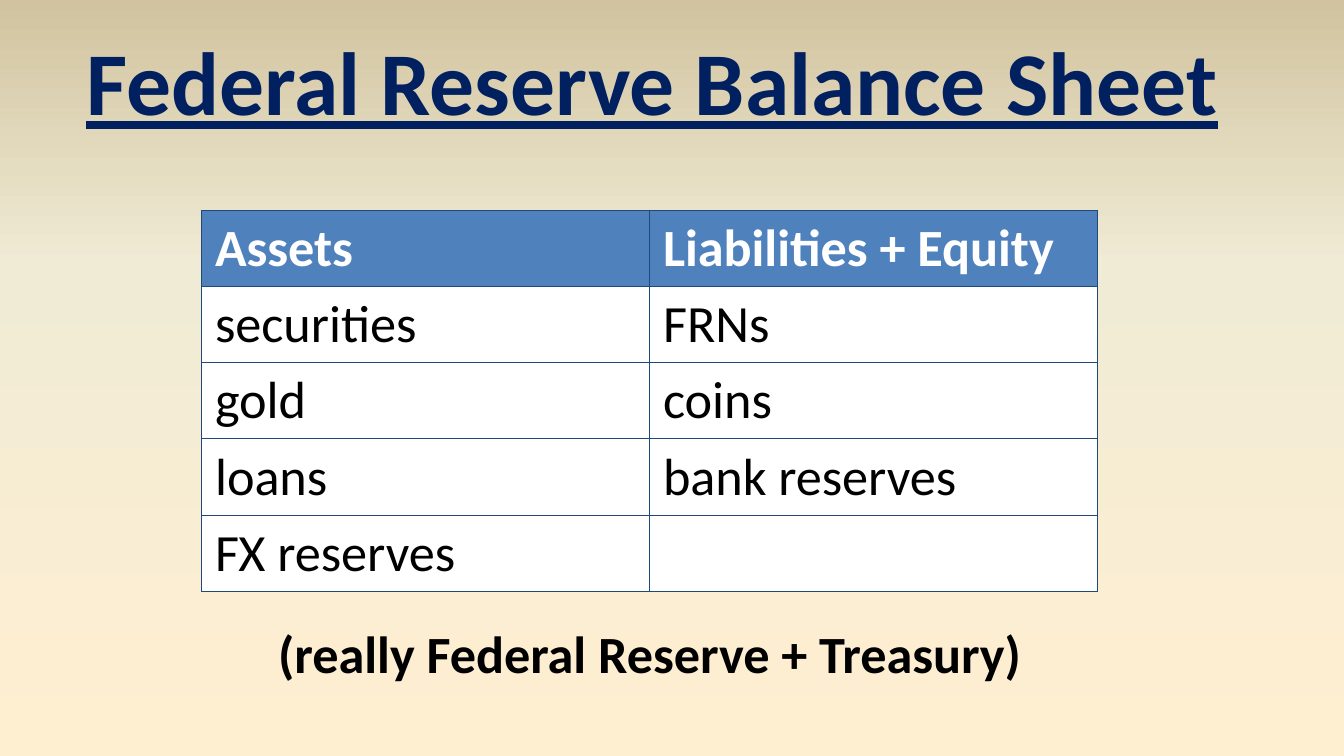
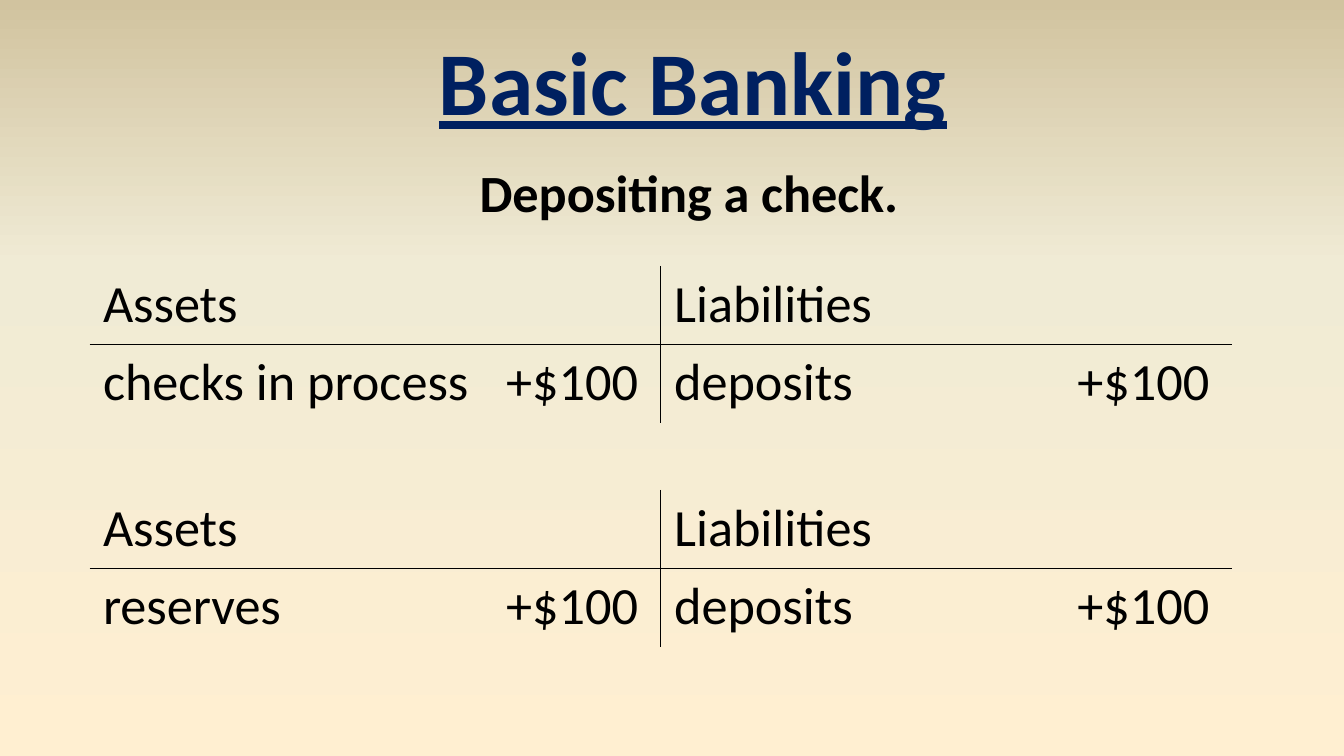
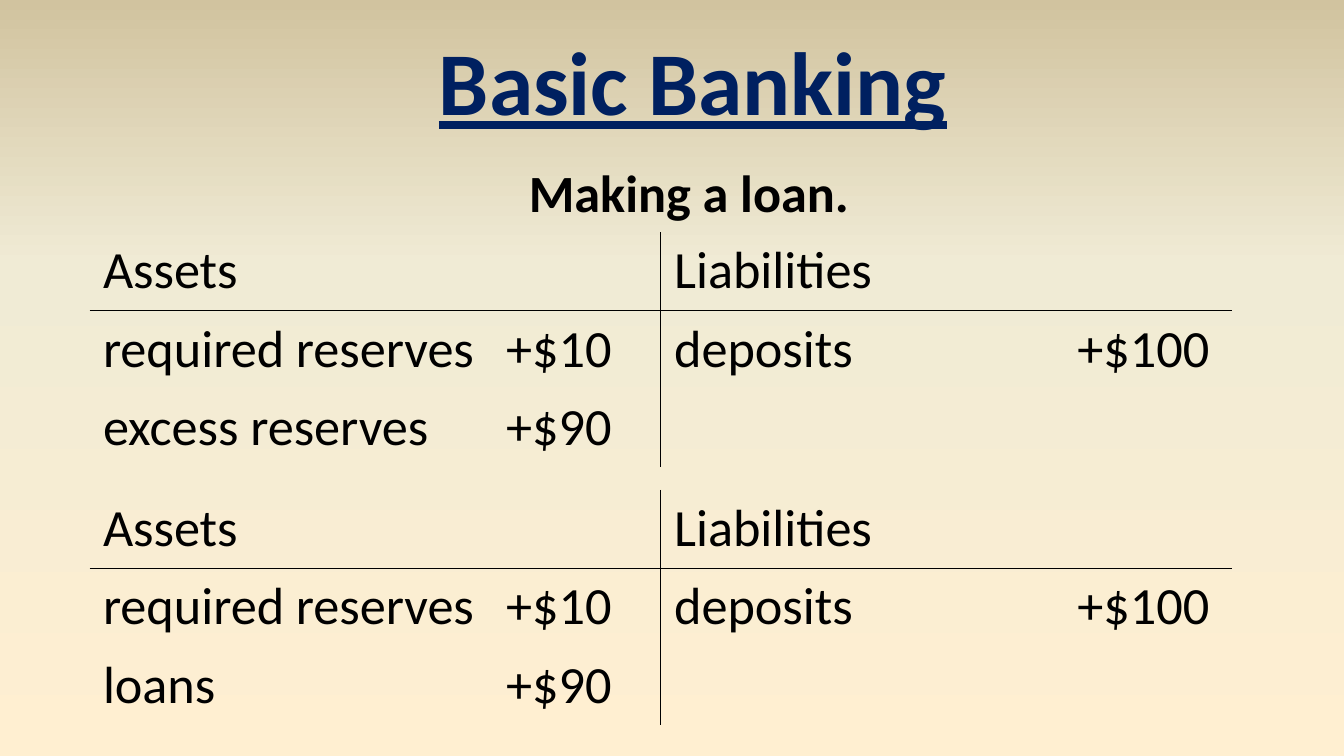
from copy import deepcopy

from lxml import etree
from pptx import Presentation
from pptx.dml.color import RGBColor
from pptx.enum.text import MSO_ANCHOR, MSO_AUTO_SIZE, PP_ALIGN
from pptx.oxml.ns import qn
from pptx.util import Pt

PX = 9525
CENTER, LEFT = PP_ALIGN.CENTER, PP_ALIGN.LEFT
TOP = MSO_ANCHOR.TOP
GROW = MSO_AUTO_SIZE.SHAPE_TO_FIT_TEXT
TITLE_ONLY = 5

NAVY, BLACK, WHITE = "002060", "000000", "FFFFFF"
HEADER_BLUE, GRID_BLUE = "4F81BD", "1F497D"
BACKDROP = [(0, "FFEFD1"), (0.65, "F0EBD5"), (1, "D1C39F")]

TITLE_FONT = {"name": "Calibri", "size": Pt(48), "bold": True, "underline": True}
CAPTION_FONT = {"name": "Calibri", "size": Pt(28), "bold": True}
BODY_FONT = {"name": "Calibri", "size": Pt(28), "bold": False}

EDGES = ("L", "R", "T", "B")
RULE_WIDTH = Pt(0.5)
AMOUNT_STOP = 288

BANKING_TITLE_BOX = (302, 14, 386, 88)
BANKING_CAPTION_BOX = (216, 110, 552, 55)
ACCOUNT_LEFT, ACCOUNT_WIDTH, ACCOUNT_ROW = 64, 816, 56

BANKING_SLIDES = [
    ("Depositing a check.", [
        (190, [("checks in process\t+$100", "deposits\t+$100")]),
        (350, [("reserves\t+$100", "deposits\t+$100")]),
    ]),
    ("Making a loan.", [
        (166, [("required reserves\t+$10", "deposits\t+$100"),
               ("excess reserves\t+$90", "")]),
        (350, [("required reserves\t+$10", "deposits\t+$100"),
               ("loans\t+$90", "")]),
    ]),
]

BALANCE_ROWS = [
    ("Assets", "Liabilities + Equity"),
    ("securities", "FRNs"),
    ("gold", "coins"),
    ("loans", "bank reserves"),
    ("FX reserves", ""),
]


def rgb(hex_color):
    return RGBColor.from_string(hex_color)


def emu(box):
    return [length * PX for length in box]


def write(paragraph, text, font_values, color, align):
    paragraph.alignment = align
    if not text:
        return
    run = paragraph.add_run()
    run.text = text
    for name, value in font_values.items():
        setattr(run.font, name, value)
    run.font.color.rgb = rgb(color)


def paint_backdrop(master):
    fill = master.background.fill
    fill.gradient()
    fill.gradient_angle = 90
    stops = master.element.find(".//" + qn("a:gsLst"))
    stops.append(deepcopy(stops[-1]))
    for stop, (position, color) in zip(fill.gradient_stops, BACKDROP):
        stop.position = position
        stop.color.rgb = rgb(color)


def add_titled_slide(prs, title, box):
    slide = prs.slides.add_slide(prs.slide_layouts[TITLE_ONLY])
    heading = slide.shapes.title
    heading.left, heading.top, heading.width, heading.height = emu(box)
    frame = heading.text_frame
    frame_values = {"word_wrap": False, "auto_size": GROW, "vertical_anchor": TOP}
    for name, value in frame_values.items():
        setattr(frame, name, value)
    write(frame.paragraphs[0], title, TITLE_FONT, NAVY, CENTER)
    return slide


def add_caption(slide, text, box):
    frame = slide.shapes.add_textbox(*emu(box)).text_frame
    frame.word_wrap = True
    frame.auto_size = GROW
    write(frame.paragraphs[0], text, CAPTION_FONT, BLACK, CENTER)


def rule_cell(cell, ruled_edges, color):
    properties = cell._tc.get_or_add_tcPr()
    for order, edge in enumerate(EDGES):
        line = etree.Element(qn(f"a:ln{edge}"), w=str(RULE_WIDTH))
        if edge in ruled_edges:
            solid = etree.SubElement(line, qn("a:solidFill"))
            etree.SubElement(solid, qn("a:srgbClr"), val=color)
        else:
            etree.SubElement(line, qn("a:noFill"))
        properties.insert(order, line)


def set_amount_stop(paragraph):
    stops = etree.SubElement(paragraph._p.get_or_add_pPr(), qn("a:tabLst"))
    etree.SubElement(stops, qn("a:tab"), pos=str(AMOUNT_STOP * PX), algn="l")


def add_plain_table(slide, rows, left, top, width, row_height):
    box = (left, top, width, row_height * len(rows))
    table = slide.shapes.add_table(len(rows), 2, *emu(box)).table
    table.first_row = table.horz_banding = False
    return table


def add_balance_sheet(slide, rows, left, top, width, row_height):
    table = add_plain_table(slide, rows, left, top, width, row_height)
    for r, entries in enumerate(rows):
        fill, font, color = ((WHITE, BODY_FONT, BLACK) if r
                             else (HEADER_BLUE, CAPTION_FONT, WHITE))
        for c, entry in enumerate(entries):
            cell = table.cell(r, c)
            cell.fill.solid()
            cell.fill.fore_color.rgb = rgb(fill)
            rule_cell(cell, EDGES, GRID_BLUE)
            write(cell.text_frame.paragraphs[0], entry, font, color, LEFT)


def add_t_account(slide, entries, left, top, width, row_height):
    rows = [("Assets", "Liabilities")] + entries
    table = add_plain_table(slide, rows, left, top, width, row_height)
    for r, sides in enumerate(rows):
        crossbar = {0: "B", 1: "T"}.get(r, "")
        for c, entry in enumerate(sides):
            cell = table.cell(r, c)
            cell.fill.background()
            rule_cell(cell, "RL"[c] + crossbar, BLACK)
            paragraph = cell.text_frame.paragraphs[0]
            write(paragraph, entry, BODY_FONT, BLACK, LEFT)
            if "\t" in entry:
                set_amount_stop(paragraph)


def add_balance_slide(prs):
    slide = add_titled_slide(prs, "Federal Reserve Balance Sheet", (48, 14, 836, 88))
    add_balance_sheet(slide, BALANCE_ROWS, 144, 150, 640, 54)
    add_caption(slide, "(really Federal Reserve + Treasury)", (176, 439, 576, 55))


def add_banking_slide(prs, caption, accounts):
    slide = add_titled_slide(prs, "Basic Banking", BANKING_TITLE_BOX)
    add_caption(slide, caption, BANKING_CAPTION_BOX)
    for top, entries in accounts:
        add_t_account(slide, entries, ACCOUNT_LEFT, top, ACCOUNT_WIDTH, ACCOUNT_ROW)


def main():
    prs = Presentation()
    prs.slide_width, prs.slide_height = emu((960, 540))
    paint_backdrop(prs.slide_master)
    add_balance_slide(prs)
    for caption, accounts in BANKING_SLIDES:
        add_banking_slide(prs, caption, accounts)
    prs.save("out.pptx")


if __name__ == "__main__":
    main()
